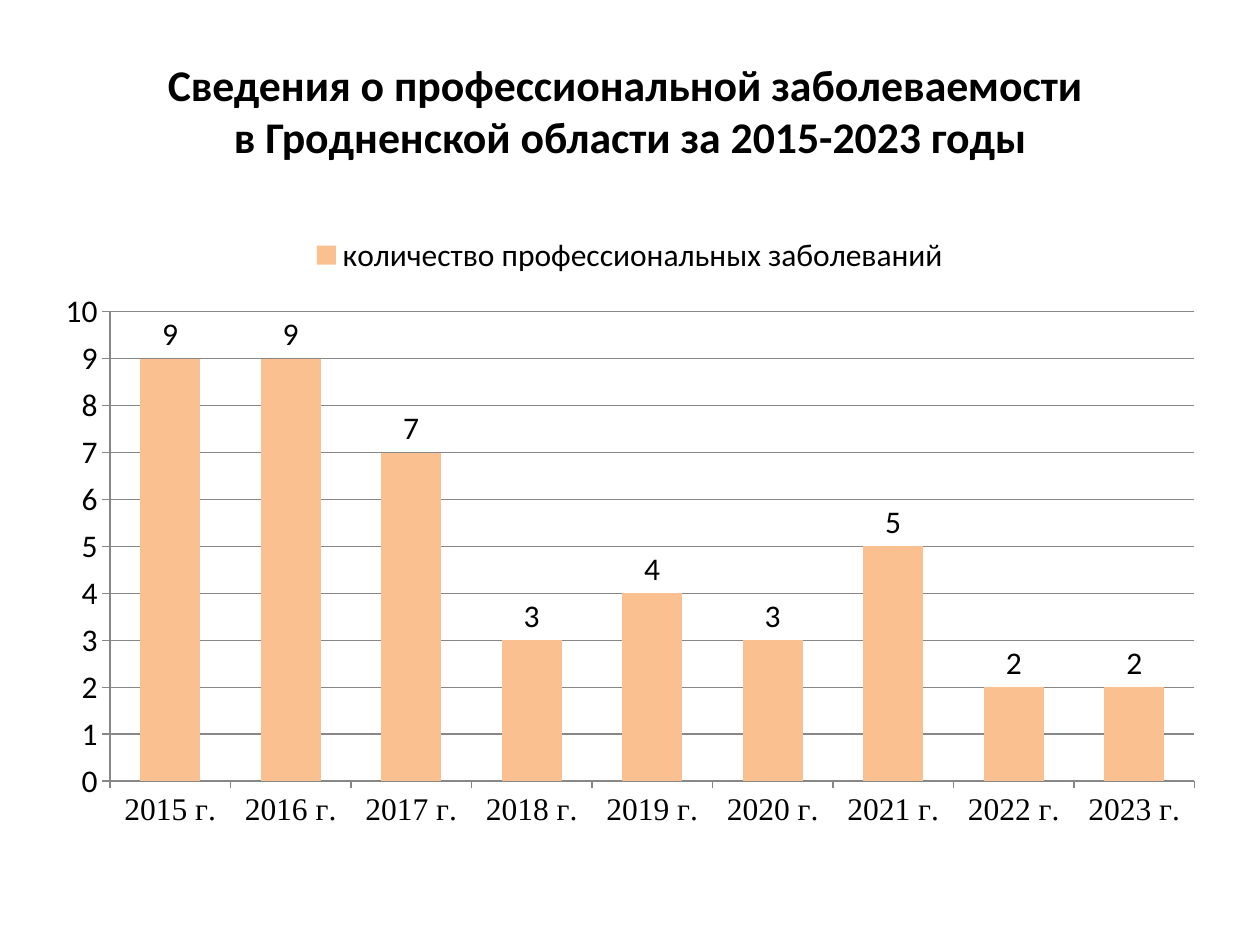
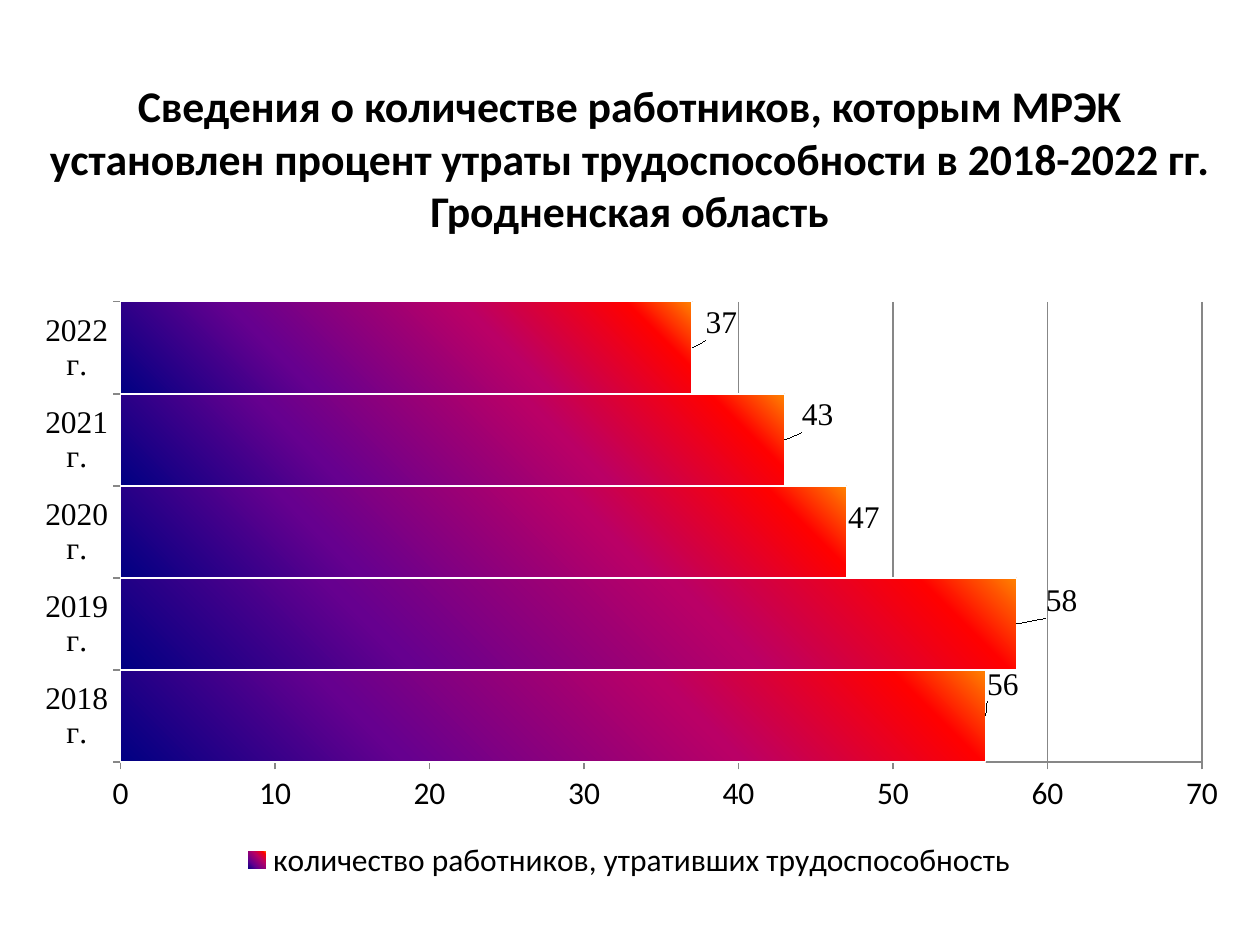
from dataclasses import dataclass

from lxml import etree
from pptx import Presentation
from pptx.chart.data import CategoryChartData as ChartData
from pptx.dml.color import RGBColor as RGB
from pptx.enum.chart import XL_CHART_TYPE as ChartType
from pptx.enum.chart import XL_LABEL_POSITION as LabelPos
from pptx.enum.chart import XL_LEGEND_POSITION as LegendPos
from pptx.enum.chart import XL_TICK_LABEL_POSITION as TickLabelPos
from pptx.enum.chart import XL_TICK_MARK as TickMark
from pptx.enum.text import MSO_ANCHOR as Anchor
from pptx.enum.text import MSO_AUTO_SIZE as AutoSize
from pptx.enum.text import PP_ALIGN as Align
from pptx.oxml import parse_xml
from pptx.oxml.ns import nsdecls, qn
from pptx.util import Pt


@dataclass(frozen=True)
class Theme:
    text: RGB = RGB.from_string("000000")
    grid: RGB = RGB.from_string("878787")
    bar: RGB = RGB.from_string("FAC090")
    bar_edge: RGB = RGB.from_string("FFFFFF")
    sunset: tuple = ((0, "000082"), (30, "66008F"), (65, "BA0066"),
                     (90, "FF0000"), (100, "FF8200"))
    sunset_angle: int = 315
    font: str = "Calibri"
    serif: str = "Times New Roman"
    title_size: int = 25
    chart_size: int = 18
    line_width: float = 0.75


THEME = Theme()
MARGIN, CHART_WIDTH = 24, 672


def set_attrs(target, values):
    for name, value in values.items():
        setattr(target, name, value)


def format_font(font, size, name=THEME.font, bold=False):
    set_attrs(font, {"name": name, "size": Pt(size), "bold": bold})
    font.color.rgb = THEME.text


def add_title_slide(prs, lines, box):
    s = prs.slides.add_slide(prs.slide_layouts[5])
    title = s.shapes.title
    set_attrs(title, dict(zip(("left", "top", "width", "height"), map(Pt, box))))
    tf = title.text_frame
    set_attrs(tf, {"word_wrap": True, "auto_size": AutoSize.NONE,
                   "vertical_anchor": Anchor.MIDDLE})
    p = tf.paragraphs[0]
    p.alignment = Align.CENTER
    for i, line in enumerate(lines):
        if i:
            p.add_line_break()
        r = p.add_run()
        r.text = line
        format_font(r.font, THEME.title_size, bold=True)
    return s


def style_line(line, color):
    line.color.rgb = color
    line.width = Pt(THEME.line_width)


def style_axes(chart, maximum, step):
    for axis in (chart.category_axis, chart.value_axis):
        set_attrs(axis, {"major_tick_mark": TickMark.OUTSIDE,
                         "minor_tick_mark": TickMark.NONE})
        style_line(axis.format.line, THEME.grid)
    format_font(chart.category_axis.tick_labels.font, THEME.chart_size, THEME.serif)
    format_font(chart.value_axis.tick_labels.font, THEME.chart_size)
    set_attrs(chart.value_axis, {"minimum_scale": 0, "maximum_scale": maximum,
                                 "major_unit": step, "has_major_gridlines": True})
    style_line(chart.value_axis.major_gridlines.format.line, THEME.grid)


def add_bar_chart(s, kind, top, height, years, name, values, gap, scale, legend_at, label_font):
    data = ChartData()
    data.categories = [f"{year} г." for year in years]
    data.add_series(name, values)
    chart = s.shapes.add_chart(kind, *map(Pt, (MARGIN, top, CHART_WIDTH, height)), data).chart
    set_attrs(chart, {"has_title": False, "has_legend": True})
    format_font(chart.font, THEME.chart_size)
    set_attrs(chart.legend, {"position": legend_at, "include_in_layout": False})
    format_font(chart.legend.font, THEME.chart_size)
    style_axes(chart, *scale)
    plot = chart.plots[0]
    set_attrs(plot, {"gap_width": gap, "vary_by_categories": False})
    labels = plot.series[0].data_labels
    set_attrs(labels, {"show_value": True, "position": LabelPos.OUTSIDE_END})
    format_font(labels.font, THEME.chart_size, label_font)
    return chart


def manual_layout(chart_height, modes, **points):
    layout = parse_xml(f"<c:layout {nsdecls('c')}><c:manualLayout/></c:layout>")
    fractions = {key: value / (CHART_WIDTH if key in "xw" else chart_height)
                 for key, value in points.items()}
    for tag, value in {**modes, **fractions}.items():
        etree.SubElement(layout[0], qn(f"c:{tag}")).set("val", str(value))
    return layout


def place_plot(chart, chart_height, x, y, w, h):
    area = chart.plots[0]._element.getparent()
    for old in area.findall(qn("c:layout")):
        area.remove(old)
    modes = {"layoutTarget": "inner", "xMode": "edge", "yMode": "edge"}
    area.insert(0, manual_layout(chart_height, modes, x=x, y=y, w=w, h=h))


def shift_labels(series, chart_height, shifts):
    for i in range(len(shifts)):
        label = series.points[i].data_label
        label.position = LabelPos.OUTSIDE_END
        format_font(label.font, THEME.chart_size, THEME.serif)
    for label, (x, y) in zip(series._element.xpath(".//c:dLbl"), shifts):
        label.insert(1, manual_layout(chart_height, {}, x=x, y=y))


def fill_gradient(series, stops, angle):
    gs = "".join(f'<a:gs pos="{pos * 1000}"><a:srgbClr val="{color}"/></a:gs>'
                 for pos, color in stops)
    fill = parse_xml(f'<a:gradFill {nsdecls("a")} rotWithShape="1"><a:gsLst>{gs}</a:gsLst>'
                     f'<a:lin ang="{angle * 60000}" scaled="0"/></a:gradFill>')
    style_line(series.format.line, THEME.bar_edge)
    series._element.find(qn("c:spPr")).insert(0, fill)


def add_disease_slide(prs):
    s = add_title_slide(prs, ("Сведения о профессиональной заболеваемости ",
                              "в Гродненской области за 2015-2023 годы"),
                        (MARGIN, 18, CHART_WIDTH, 90))
    chart = add_bar_chart(s, ChartType.COLUMN_CLUSTERED, 126, 354, range(2015, 2024),
                          "количество профессиональных заболеваний",
                          (9, 9, 7, 3, 4, 3, 5, 2, 2), 100, (10, 1),
                          LegendPos.TOP, THEME.font)
    fill = chart.plots[0].series[0].format.fill
    fill.solid()
    fill.fore_color.rgb = THEME.bar


def add_disability_slide(prs):
    s = add_title_slide(prs, ("Сведения о количестве работников, которым МРЭК установлен "
                              "процент утраты трудоспособности в 2018-2022 гг.",
                              "Гродненская область"), (16.5, 39.5, 686.5, 101.5))
    height = 360
    chart = add_bar_chart(s, ChartType.BAR_CLUSTERED, 146, height, range(2018, 2023),
                          "количество работников, утративших трудоспособность",
                          (56, 58, 47, 43, 37), 0, (70, 10),
                          LegendPos.BOTTOM, THEME.serif)
    chart.category_axis.tick_label_position = TickLabelPos.LOW
    place_plot(chart, height, 45, 26.5, 619, 263)
    series = chart.plots[0].series[0]
    shift_labels(series, height, ((-2, -18), (14, -13), (-2, -8), (7, -14), (5, -14)))
    fill_gradient(series, THEME.sunset, THEME.sunset_angle)


def main():
    prs = Presentation()
    set_attrs(prs, {"slide_width": Pt(720), "slide_height": Pt(540)})
    add_disease_slide(prs)
    add_disability_slide(prs)
    prs.save("out.pptx")


if __name__ == "__main__":
    main()
